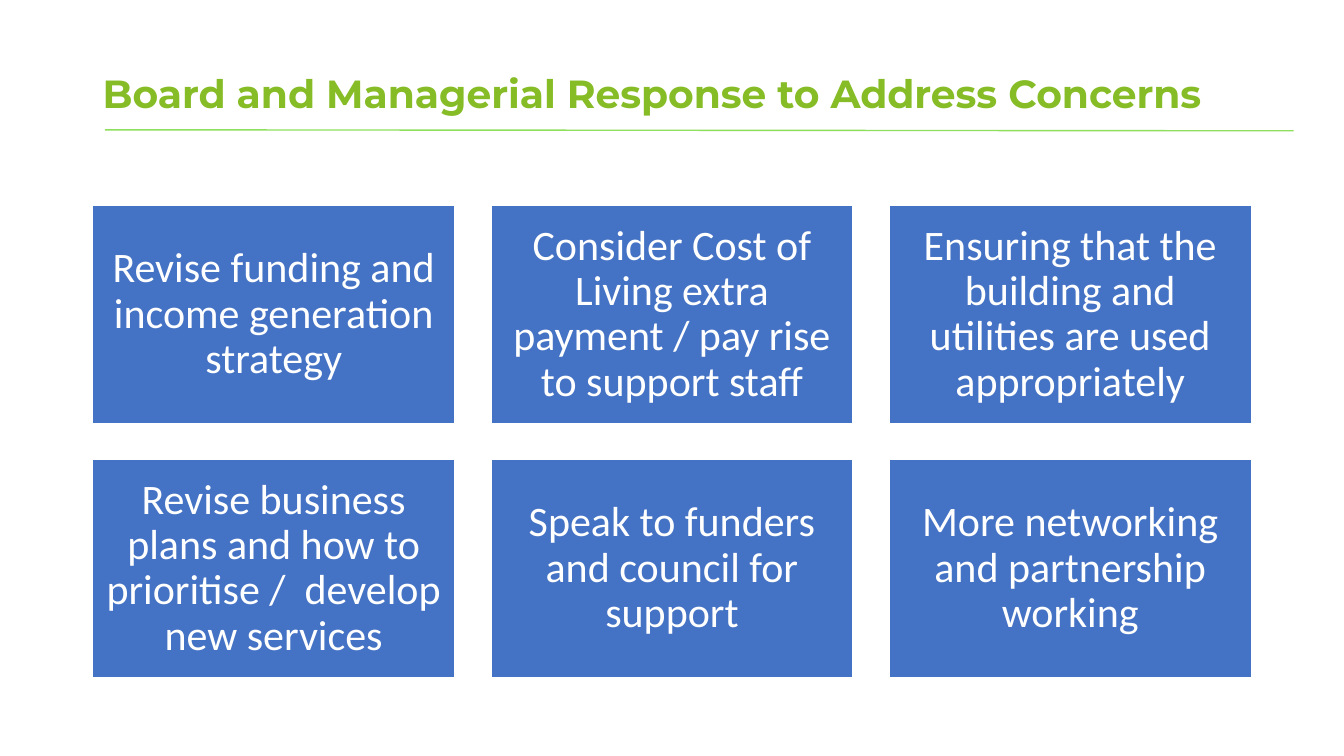
from pptx import Presentation
from pptx.dml.color import RGBColor
from pptx.enum.shapes import MSO_CONNECTOR, MSO_SHAPE
from pptx.enum.text import MSO_ANCHOR, PP_ALIGN
from pptx.oxml.ns import qn
from pptx.util import Inches, Pt
from lxml import etree

RECT = MSO_SHAPE.RECTANGLE
STRAIGHT = MSO_CONNECTOR.STRAIGHT
MIDDLE = MSO_ANCHOR.MIDDLE
LEFT, CENTER = PP_ALIGN.LEFT, PP_ALIGN.CENTER

WHITE = RGBColor(0xFF, 0xFF, 0xFF)
BLUE = RGBColor(0x44, 0x72, 0xC4)
TITLE_GREEN = RGBColor(0x86, 0xBC, 0x25)
RULE_GREEN = RGBColor(0x8E, 0xDF, 0x5C)

TITLE = "Board and Managerial Response to Address Concerns"
RESPONSES = [
    "Revise funding and income generation strategy",
    "Consider Cost of Living extra payment / pay rise to support staff",
    "Ensuring that the building and utilities are used appropriately",
    "Revise business plans and how to prioritise /  develop new services",
    "Speak to funders and council for support",
    "More networking and partnership working",
]
COLUMNS, ROWS = 3, 2
GAP = 0.36


def write_text(tf, text, font, size, color, align, bold=False):
    tf.word_wrap = True
    tf.vertical_anchor = MIDDLE
    p = tf.paragraphs[0]
    p.alignment = align
    p.line_spacing = 0.9
    r = p.add_run()
    r.text = text
    r.font.name = font
    r.font.size = Pt(size)
    r.font.bold = bold
    r.font.color.rgb = color


def add_header(slide, left, top, width, height):
    # Title
    box = slide.shapes.add_textbox(Inches(left), Inches(top), Inches(width), Inches(height))
    write_text(box.text_frame, TITLE, "Montserrat", 28, TITLE_GREEN, LEFT, bold=True)

    # Rule under the title, running past its right edge
    y = top + 0.8 * height
    rule = slide.shapes.add_connector(
        STRAIGHT, Inches(left + 0.12), Inches(y),
        Inches(left + width + 0.41), Inches(y + 0.01))
    rule.line.color.rgb = RULE_GREEN
    rule.line.width = Pt(1)
    etree.SubElement(rule._element.spPr, qn("a:effectLst"))


def add_response_grid(slide, left, top, width, height):
    card_w = (width - (COLUMNS - 1) * GAP) / COLUMNS
    card_h = (height - (ROWS - 1) * GAP) / ROWS
    for i, text in enumerate(RESPONSES):
        row, col = divmod(i, COLUMNS)
        sp = slide.shapes.add_shape(
            RECT, Inches(left + col * (card_w + GAP)), Inches(top + row * (card_h + GAP)),
            Inches(card_w), Inches(card_h))
        sp.shadow.inherit = False
        sp.fill.solid()
        sp.fill.fore_color.rgb = BLUE
        sp.line.color.rgb = WHITE
        sp.line.width = Pt(1)
        tf = sp.text_frame
        tf.margin_left = tf.margin_right = tf.margin_top = tf.margin_bottom = Inches(0.12)
        write_text(tf, text, "Calibri", 30, WHITE, CENTER)


def main():
    prs = Presentation()
    prs.slide_width, prs.slide_height = Inches(13.33), Inches(7.5)
    slide = prs.slides.add_slide(prs.slide_layouts[6])
    add_header(slide, 0.92, 0.4, 11.5, 1.11)
    add_response_grid(slide, 0.92, 2.04, 11.49, 4.68)
    prs.save("out.pptx")


if __name__ == "__main__":
    main()
